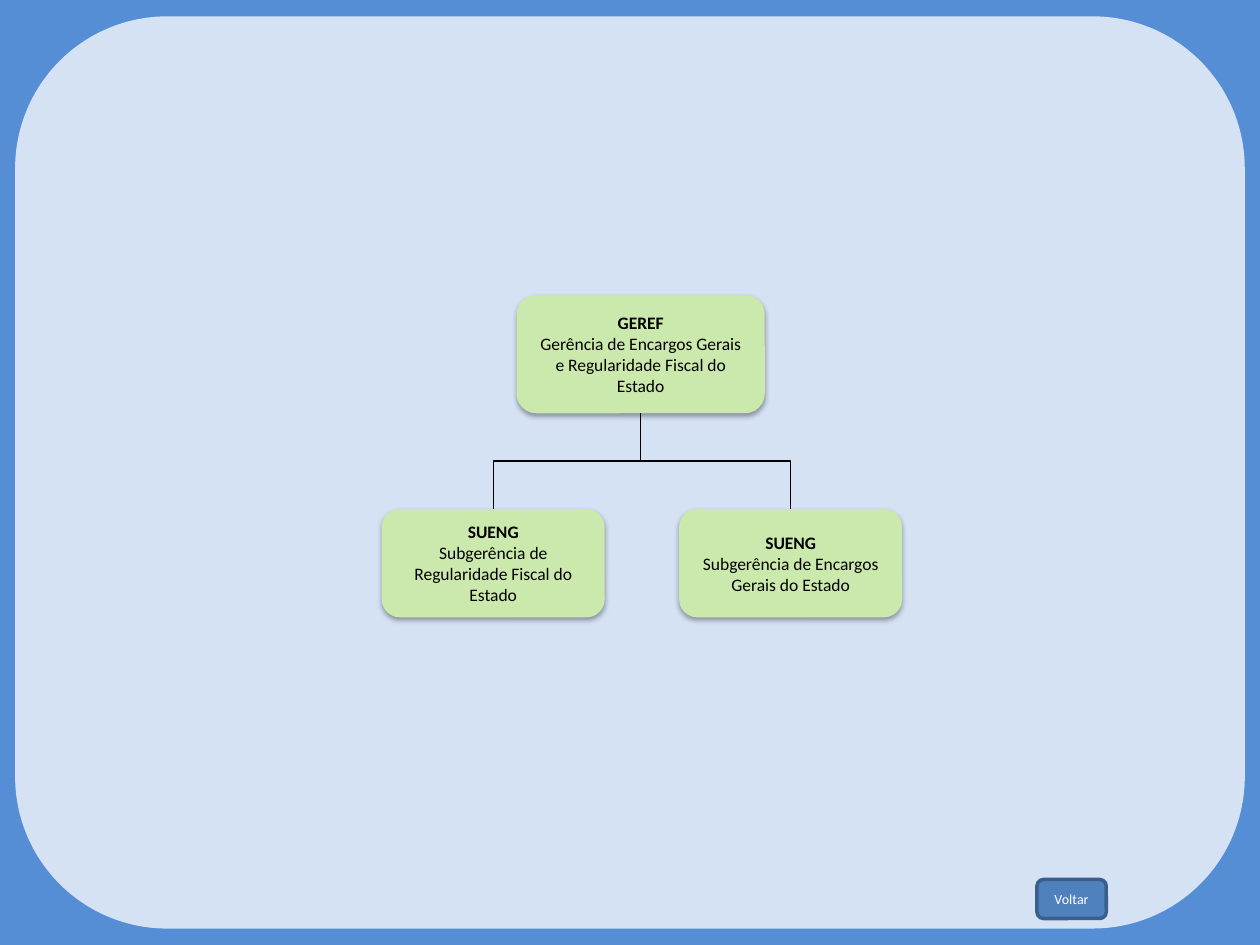
from dataclasses import dataclass

from lxml.etree import SubElement
from pptx import Presentation
from pptx.dml.color import RGBColor
from pptx.enum.shapes import MSO_CONNECTOR, MSO_SHAPE
from pptx.enum.text import MSO_ANCHOR, PP_ALIGN
from pptx.oxml.ns import qn
from pptx.shapes.autoshape import Shape
from pptx.shapes.connector import Connector
from pptx.slide import Slide
from pptx.util import Inches, Pt

FRAME_BLUE = "558ED5"
PANEL_BLUE = "D4E2F4"
UNIT_GREEN = "CCE9AD"
BUTTON_BLUE = "4F81BD"
BUTTON_EDGE = "3A5F8C"
BLACK = "000000"
WHITE = "FFFFFF"

SUBUNIT_TOP = 4.04
SUBUNIT_WIDTH = 1.77
SUBUNIT_HEIGHT = 0.86


@dataclass
class Unit:
    acronym: str
    name: str
    left: float
    top: float = SUBUNIT_TOP
    width: float = SUBUNIT_WIDTH
    height: float = SUBUNIT_HEIGHT
    inset: float | None = 0.04


MANAGEMENT = Unit(
    "GEREF",
    "Gerência de Encargos Gerais e Regularidade Fiscal do Estado",
    4.1, 2.34, 1.97, 0.94, None,
)
SUBUNITS = [
    Unit("SUENG", "Subgerência de Encargos Gerais do Estado", 5.39),
    Unit("SUENG", "Subgerência de Regularidade Fiscal do Estado", 3.03),
]


def color(hex_value: str) -> RGBColor:
    return RGBColor.from_string(hex_value)


def add_rounded_box(slide: Slide, left: float, top: float, width: float,
                    height: float, fill: str) -> Shape:
    box = slide.shapes.add_shape(
        MSO_SHAPE.ROUNDED_RECTANGLE,
        Inches(left), Inches(top), Inches(width), Inches(height),
    )
    box.shadow.inherit = False
    box.fill.solid()
    box.fill.fore_color.rgb = color(fill)
    box.line.fill.background()
    return box


def write_text(box: Shape, *lines: str, size: float, font_color: str,
               bold_first: bool = False, inset: float | None = None) -> None:
    frame = box.text_frame
    frame.word_wrap = True
    frame.vertical_anchor = MSO_ANCHOR.MIDDLE
    if inset is not None:
        frame.margin_left = frame.margin_right = Inches(inset)
        frame.margin_top = frame.margin_bottom = Inches(inset)
    for index, line in enumerate(lines):
        paragraph = frame.paragraphs[0] if index == 0 else frame.add_paragraph()
        paragraph.alignment = PP_ALIGN.CENTER
        run = paragraph.add_run()
        run.text = line
        run.font.name = "Calibri"
        run.font.size = Pt(size)
        run.font.bold = bold_first and index == 0
        run.font.color.rgb = color(font_color)


def add_soft_shadow(box: Shape) -> None:
    effects = box._element.spPr.find(qn("a:effectLst"))
    shadow = SubElement(
        effects, qn("a:outerShdw"), blurRad=str(Pt(3.1)), dist=str(Pt(1.8)),
        dir="5400000", algn="ctr", rotWithShape="0",
    )
    tint = SubElement(shadow, qn("a:srgbClr"), val=BLACK)
    SubElement(tint, qn("a:alpha"), val="35000")


def add_unit(slide: Slide, unit: Unit) -> Shape:
    box = add_rounded_box(
        slide, unit.left, unit.top, unit.width, unit.height, UNIT_GREEN)
    add_soft_shadow(box)
    write_text(box, unit.acronym, unit.name, size=10, font_color=BLACK,
               bold_first=True, inset=unit.inset)
    return box


def turn_to_vertical(link: Connector) -> None:
    goes_right = link.end_x > link.begin_x
    center_x = (link.begin_x + link.end_x) // 2
    center_y = (link.begin_y + link.end_y) // 2
    link.width, link.height = link.height, link.width
    link.left = center_x - link.width // 2
    link.top = center_y - link.height // 2
    transform = link._element.spPr.xfrm
    transform.flipH = goes_right
    transform.rot = 270 if goes_right else 90


def link_units(slide: Slide, parent: Shape, child: Shape) -> None:
    link = slide.shapes.add_connector(MSO_CONNECTOR.ELBOW, 0, 0, 0, 0)
    link.begin_connect(parent, 2)
    link.end_connect(child, 0)
    turn_to_vertical(link)
    link.line.color.rgb = color(BLACK)
    link.line.width = Pt(0.75)
    SubElement(link._element.spPr, qn("a:effectLst"))


def add_back_button(slide: Slide) -> None:
    button = add_rounded_box(slide, 8.23, 6.98, 0.55, 0.31, BUTTON_BLUE)
    button.line.color.rgb = color(BUTTON_EDGE)
    button.line.width = Pt(2)
    write_text(button, "Voltar", size=8, font_color=WHITE)


def main() -> None:
    presentation = Presentation()
    presentation.slide_width = Inches(10)
    presentation.slide_height = Inches(7.5)
    slide = presentation.slides.add_slide(presentation.slide_layouts[6])
    slide.background.fill.solid()
    slide.background.fill.fore_color.rgb = color(FRAME_BLUE)

    add_rounded_box(slide, 0.12, 0.13, 9.76, 7.24, PANEL_BLUE)
    management = add_unit(slide, MANAGEMENT)
    add_back_button(slide)
    subunits = [add_unit(slide, unit) for unit in SUBUNITS]
    for subunit in reversed(subunits):
        link_units(slide, management, subunit)

    presentation.save("out.pptx")


if __name__ == "__main__":
    main()
